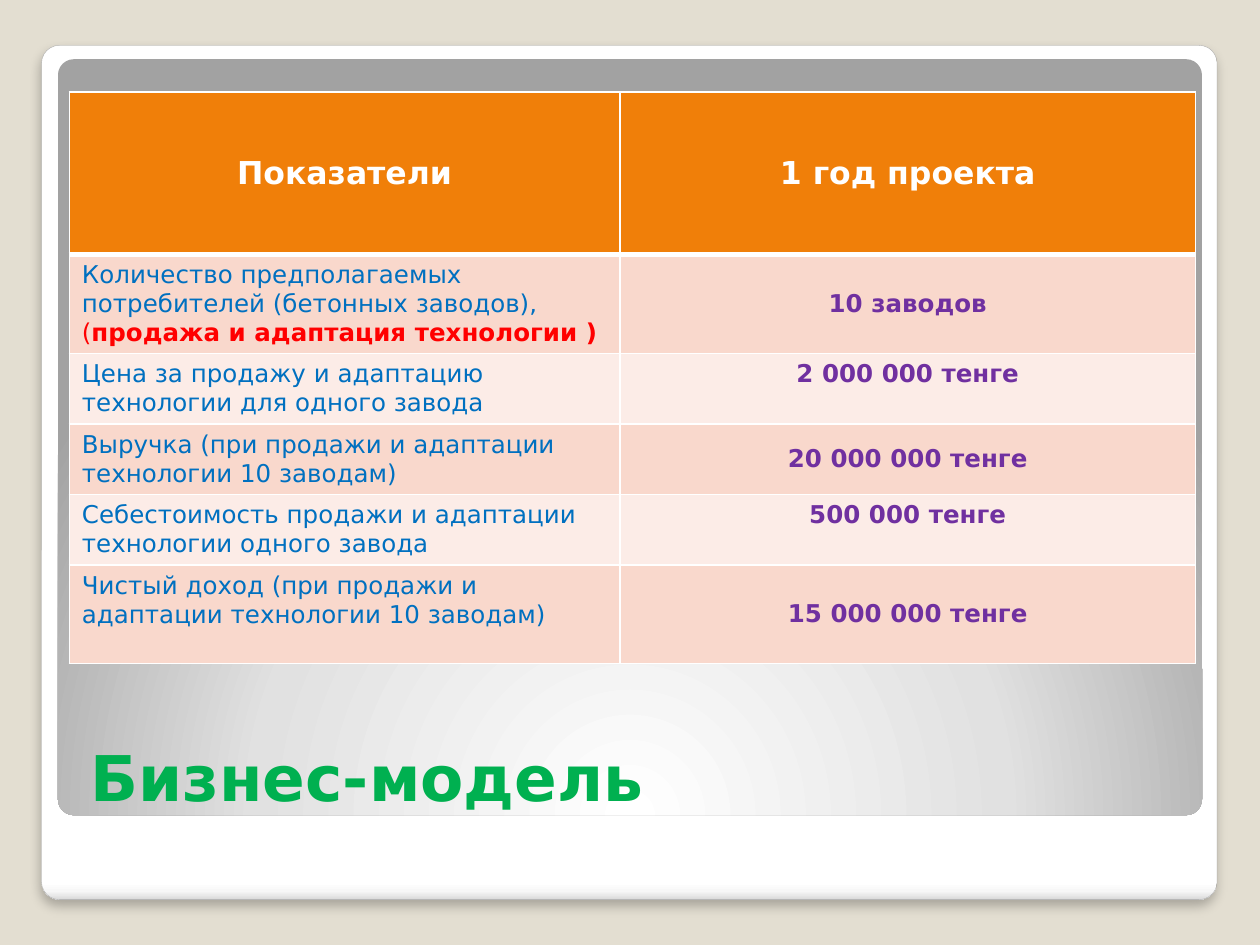
"""Builds the business model slide: a framed panel, a table of indicators and a title."""
from lxml import etree
from pptx import Presentation
from pptx import util as u
from pptx.dml.color import RGBColor
from pptx.enum import shapes, text
from pptx.oxml import parse_xml
from pptx.oxml.ns import qn

W, H = 10, 7.5
FONT = "DejaVu Sans"
C = {"bg": "E3DED1", "white": "FFFFFF", "edge": "A4A4A4", "title": "00B050",
     "head": "F07F09", "odd": "F9D8CC", "even": "FCECE7",
     "label": "0070C0", "note": "FF0000", "value": "7030A0", "shadow": "000000"}
FRAME = [(0, "FFFFFF"), (98, "FFFFFF"), (99, "F7F7F7"), (100, "DADADA")]
PANEL = [(0, "FFFFFF"), (55, "E1E1E1"), (100, "A2A2A2")]
LINEAR = '<a:lin ang="5400000" scaled="0"/>'
RADIAL = ('<a:path path="circle"><a:fillToRect l="50000" t="175000" '
          'r="50000" b="-75000"/></a:path>')
NS = 'xmlns:a="http://schemas.openxmlformats.org/drawingml/2006/main"'
COLS = [4.37, 4.57]
ROWS = [1.29, 0.78, 0.56, 0.56, 0.56, 0.78]
TOP, MIDDLE = text.MSO_ANCHOR.TOP, text.MSO_ANCHOR.MIDDLE
DATA = [
    ("Количество предполагаемых потребителей (бетонных заводов), ", "10 заводов", MIDDLE),
    ("Цена за продажу и адаптацию технологии для одного завода", "2 000 000 тенге", TOP),
    ("Выручка (при продажи и адаптации технологии 10 заводам)", "20 000 000 тенге", MIDDLE),
    ("Себестоимость продажи и адаптации технологии одного завода", "500 000 тенге", TOP),
    ("Чистый доход (при продажи и адаптации технологии 10 заводам)", "15 000 000 тенге", MIDDLE),
]


def rgb(name):
    """Return a palette colour."""
    return RGBColor.from_string(C[name])


def write(p, words, color, size=14, bold=False, align=text.PP_ALIGN.LEFT):
    """Add a formatted run to a paragraph."""
    p.alignment = align
    r = p.add_run()
    r.text = words
    r.font.name, r.font.size, r.font.bold = FONT, u.Pt(size), bold
    r.font.color.rgb = rgb(color)


def rounded(s, box, stops, direction):
    """Draw a rounded rectangle with a gradient fill and no line."""
    sp = s.shapes.add_shape(shapes.MSO_SHAPE.ROUNDED_RECTANGLE, *map(u.Inches, box))
    sp.adjustments[0] = 0.021
    sp.shadow.inherit = False
    gs = "".join(f'<a:gs pos="{pos * 1000}"><a:srgbClr val="{color}"/></a:gs>'
                 for pos, color in stops)
    grad = f'<a:gradFill {NS} rotWithShape="1"><a:gsLst>{gs}</a:gsLst>{direction}</a:gradFill>'
    sp._element.spPr.insert(2, parse_xml(grad))
    sp.line.fill.background()
    return sp


def add_frame(s):
    """Draw the white frame with its shadow and the grey panel inside."""
    sp = rounded(s, (0.33, 0.36, 9.33, 6.78), FRAME, LINEAR)
    sp.line.color.rgb, sp.line.width = rgb("edge"), u.Pt(0.16)
    effects = sp._element.spPr.find(qn("a:effectLst"))
    effects.append(parse_xml(
        f'<a:outerShdw {NS} blurRad="{u.Pt(6)}" dist="{u.Pt(4)}" dir="5400000" algn="t" '
        f'rotWithShape="0"><a:srgbClr val="{C["shadow"]}"><a:alpha val="25000"/>'
        '</a:srgbClr></a:outerShdw>'))
    rounded(s, (0.46, 0.47, 9.08, 6), PANEL, RADIAL)


def add_title(s, words):
    """Place the title placeholder above the panel."""
    sp = s.shapes.title
    s.shapes._spTree.append(sp._element)
    sp.left, sp.top, sp.width, sp.height = map(u.Inches, (0.62, 5.75, 8.95, 0.76))
    sp.text_frame.vertical_anchor = text.MSO_ANCHOR.BOTTOM
    write(sp.text_frame.paragraphs[0], words, "title", size=36, bold=True)


def format_cell(cell, fill, anchor=MIDDLE, top=1, bottom=1):
    """Set borders, fill and anchor of a cell and return its paragraph."""
    tcPr = cell._tc.get_or_add_tcPr()
    for side, width in zip("LRTB", (1, 1, top, bottom)):
        ln = etree.SubElement(tcPr, qn(f"a:ln{side}"), w=str(u.Pt(width)))
        solid = etree.SubElement(ln, qn("a:solidFill"))
        etree.SubElement(solid, qn("a:srgbClr"), val=C["white"])
    cell.fill.solid()
    cell.fill.fore_color.rgb = rgb(fill)
    cell.vertical_anchor = anchor
    return cell.text_frame.paragraphs[0]


def add_table(s):
    """Add the table of indicators."""
    box = map(u.Inches, (0.55, 0.73, sum(COLS), sum(ROWS)))
    tbl = s.shapes.add_table(len(ROWS), len(COLS), *box).table
    for col, width in zip(tbl.columns, COLS):
        col.width = u.Inches(width)
    for row, height in zip(tbl.rows, ROWS):
        row.height = u.Inches(height)
    center = text.PP_ALIGN.CENTER
    for i, words in enumerate(("Показатели", "1 год проекта")):
        p = format_cell(tbl.cell(0, i), "head", bottom=3)
        write(p, words, "white", size=18, bold=True, align=center)
    for i, (label, value, anchor) in enumerate(DATA, 1):
        fill = "odd" if i % 2 else "even"
        top = 3 if i == 1 else 1
        p = format_cell(tbl.cell(i, 0), fill, TOP if i == len(DATA) else MIDDLE, top)
        write(p, label, "label")
        if i == 1:
            write(p, "(", "note")
            write(p, "продажа и адаптация технологии )", "note", bold=True)
        p = format_cell(tbl.cell(i, 1), fill, anchor, top)
        write(p, value, "value", bold=True, align=center)


def main():
    """Build and save the slide."""
    prs = Presentation()
    prs.slide_width, prs.slide_height = u.Inches(W), u.Inches(H)
    s = prs.slides.add_slide(prs.slide_layouts[5])
    s.background.fill.solid()
    s.background.fill.fore_color.rgb = rgb("bg")
    add_frame(s)
    add_title(s, "Бизнес-модель")
    add_table(s)
    prs.save("out.pptx")


if __name__ == "__main__":
    main()
